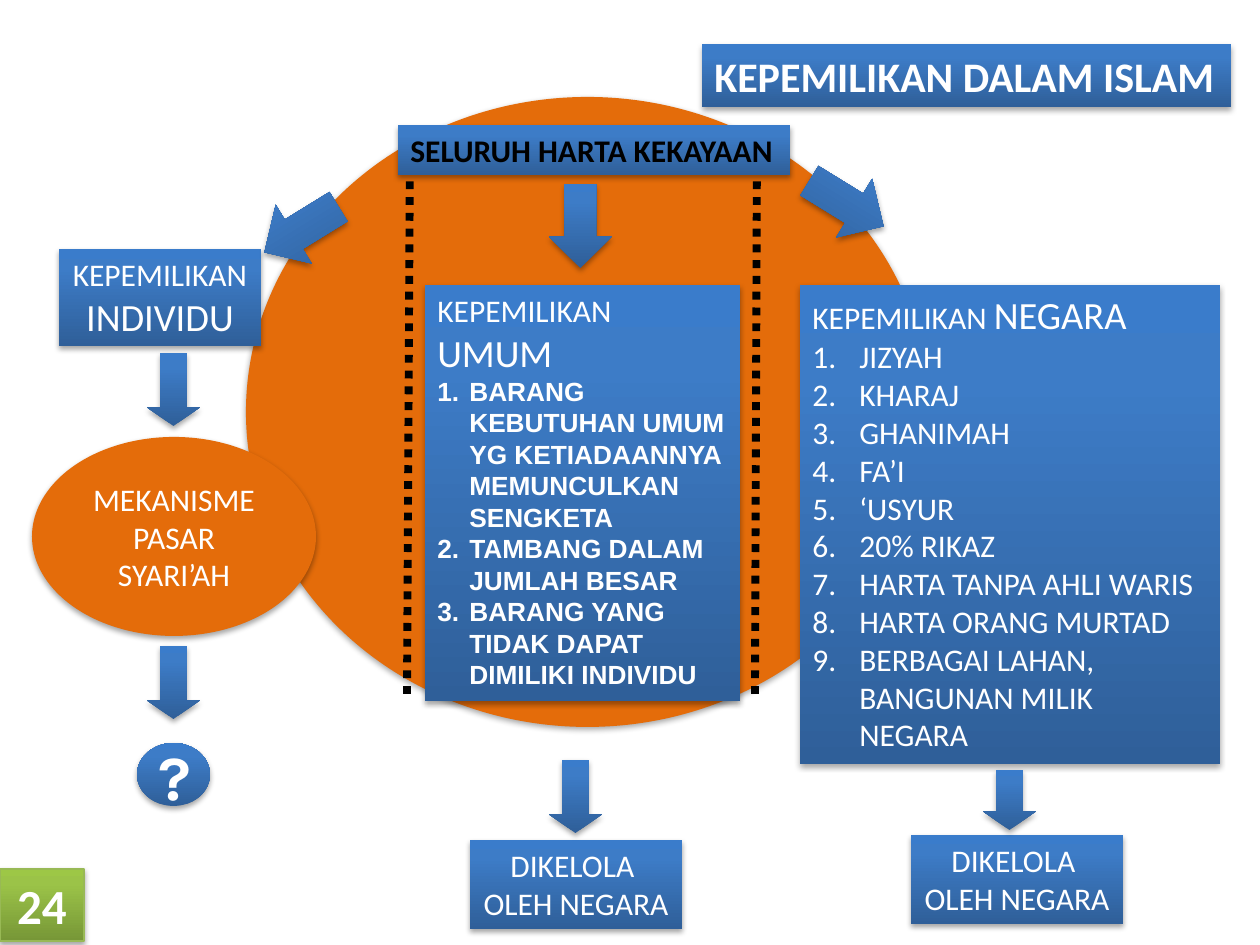
from dataclasses import dataclass, replace

from lxml.etree import SubElement
from pptx import Presentation
from pptx.dml.color import RGBColor
from pptx.enum.dml import MSO_LINE_DASH_STYLE as Dash
from pptx.enum.shapes import MSO_CONNECTOR as Connector, MSO_SHAPE as Shape
from pptx.enum.text import MSO_ANCHOR as Anchor, MSO_AUTO_SIZE as AutoSize, PP_ALIGN as Align
from pptx.oxml.ns import qn
from pptx.util import Emu, Pt

EMU_PER_PX = 914400 / 126


@dataclass(frozen=True)
class Style:
    size: int
    font: str = "Calibri"
    color: str = "FFFFFF"
    bold: bool = False


@dataclass(frozen=True)
class Theme:
    orange: str = "E46C0A"
    black: str = "000000"
    green_line: str = "98B955"
    blue: tuple = ((0, "2F5F99"), (80, "3D7CC7"), (100, "3A7CCB"))
    green: tuple = ((0, "779737"), (80, "9BC348"), (100, "9DC746"))
    title: Style = Style(24, bold=True)
    body: Style = Style(18)
    accent: Style = Style(22)
    detail: Style = Style(15, "Arial", bold=True)
    question: Style = Style(36, "Karla", bold=True)
    number: Style = Style(28, bold=True)


THEME = Theme()


def px(value):
    return Emu(round(value * EMU_PER_PX))


def add_node(parent, tag, **attributes):
    return SubElement(parent, qn(tag), attributes)


def add_color(parent, color):
    return add_node(parent, "a:srgbClr", val=color)


def fill_gradient(shape, stops):
    shape.fill.gradient()
    shape.fill.gradient_angle = 90
    stop_list = shape._element.spPr.find(qn("a:gradFill")).find(qn("a:gsLst"))
    for stop in list(stop_list):
        stop_list.remove(stop)
    for percent, color in stops:
        add_color(add_node(stop_list, "a:gs", pos=str(percent * 1000)), color)


def add_shadow(shape):
    shape.shadow.inherit = False
    effects = shape._element.spPr.find(qn("a:effectLst"))
    shadow = add_node(effects, "a:outerShdw", blurRad="40000", dist="23000",
                      dir="5400000", rotWithShape="0")
    add_node(add_color(shadow, THEME.black), "a:alpha", val="35000")


def add_figure(shapes, kind, place, fill=THEME.blue, turn=0, adjust=()):
    shape = shapes.add_shape(kind, *map(px, place))
    if isinstance(fill, str):
        shape.fill.solid()
        shape.fill.fore_color.rgb = RGBColor.from_string(fill)
    else:
        fill_gradient(shape, fill)
    shape.line.fill.background()
    add_shadow(shape)
    shape.rotation = turn
    for index, value in enumerate(adjust):
        shape.adjustments[index] = value
    return shape


def number_para(para, indent):
    properties = para._p.get_or_add_pPr()
    properties.set("marL", str(px(indent)))
    properties.set("indent", str(-px(indent)))
    add_node(properties, "a:buFont", typeface="+mj-lt")
    add_node(properties, "a:buAutoNum", type="arabicPeriod")


def write_text(shape, paras, align=Align.LEFT, wrap=False, indent=0,
               anchor=Anchor.TOP, size=AutoSize.SHAPE_TO_FIT_TEXT):
    frame = shape.text_frame
    frame.word_wrap = wrap
    frame.auto_size = size
    frame.vertical_anchor = anchor
    for index, spans in enumerate(paras):
        para = frame.add_paragraph() if index else frame.paragraphs[0]
        para.alignment = align
        if indent and index:
            number_para(para, indent)
        for text, style in spans:
            span = para.add_run()
            span.text = text
            span.font.size = Pt(style.size)
            span.font.name = style.font
            span.font.bold = style.bold
            span.font.color.rgb = RGBColor.from_string(style.color)


def add_box(page, place, paras, fill=THEME.blue, **layout):
    box = add_figure(page.shapes, Shape.RECTANGLE, place, fill)
    write_text(box, paras, **layout)
    return box


def add_list_box(page, place, heading, items, style, indent):
    opening = [("KEPEMILIKAN ", THEME.body), (heading, THEME.accent)]
    add_box(page, place, [opening] + [[(item, style)] for item in items],
            wrap=True, indent=indent)


def add_divider(page, top_x, bottom_x):
    line = page.shapes.add_connector(
        Connector.STRAIGHT, px(top_x), px(134), px(bottom_x), px(701))
    line.line.color.rgb = RGBColor.from_string(THEME.black)
    line.line.width = Pt(4.5)
    line.line.dash_style = Dash.ROUND_DOT
    add_node(line._element.spPr, "a:effectLst")


def add_question(page):
    group = page.shapes.add_group_shape()
    add_figure(group.shapes, Shape.OVAL, (137, 743, 73, 63))
    label = group.shapes.add_textbox(*map(px, (146, 731, 58, 89)))
    write_text(label, [[("?", THEME.question)]])


def main():
    deck = Presentation()
    deck.slide_width, deck.slide_height = px(1260), px(945)
    page = deck.slides.add_slide(deck.slide_layouts[6])
    body = THEME.body

    add_figure(page.shapes, Shape.OVAL, (246, 97, 683, 630), THEME.orange)
    add_box(page, (702, 44, 529, 63), [[("KEPEMILIKAN DALAM ISLAM", THEME.title)]])
    for top_x, bottom_x in ((410, 407), (757, 755)):
        add_divider(page, top_x, bottom_x)

    add_box(page, (59, 249, 202, 97),
            [[("KEPEMILIKAN", body)], [("INDIVIDU", THEME.accent)]], align=Align.CENTER)
    add_list_box(page, (425, 285, 315, 416), "UMUM", (
        "BARANG KEBUTUHAN UMUM YG KETIADAANNYA MEMUNCULKAN SENGKETA",
        "TAMBANG DALAM JUMLAH BESAR",
        "BARANG YANG TIDAK DAPAT DIMILIKI INDIVIDU",
    ), THEME.detail, 32)
    add_list_box(page, (800, 285, 420, 479), "NEGARA", (
        "JIZYAH", "KHARAJ", "GHANIMAH", "FA’I", "‘USYUR", "20% RIKAZ",
        "HARTA TANPA AHLI WARIS", "HARTA ORANG MURTAD",
        "BERBAGAI LAHAN, BANGUNAN MILIK NEGARA",
    ), body, 47)

    for kind, place, turn in (
        (Shape.LEFT_ARROW, (258, 195, 87, 69), 328.4),
        (Shape.DOWN_ARROW, (549, 184, 63, 84), 0),
        (Shape.RIGHT_ARROW, (803, 169, 87, 69), 31.6),
    ):
        add_figure(page.shapes, kind, place, turn=turn, adjust=(0.5, 0.5))
    add_box(page, (398, 125, 392, 50),
            [[("SELURUH HARTA KEKAYAAN", replace(body, color=THEME.black, bold=True))]])

    market = add_figure(page.shapes, Shape.OVAL, (32, 437, 284, 199), THEME.orange)
    write_text(market, [[("MEKANISME PASAR SYARI’AH", body)]], align=Align.CENTER,
               wrap=True, anchor=Anchor.MIDDLE, size=AutoSize.NONE)
    for left, top in ((470, 840), (911, 835)):
        add_box(page, (left, top, 212, 89),
                [[("DIKELOLA ", body)], [("OLEH NEGARA", body)]], align=Align.CENTER)
    for left, top, height in ((147, 353, 73), (147, 646, 73), (549, 760, 73), (983, 770, 60)):
        add_figure(page.shapes, Shape.DOWN_ARROW, (left, top, 53, height), adjust=(0.5, 0.35))

    add_question(page)
    badge = add_box(page, (0, 869, 84, 72), [[("24", THEME.number)]], THEME.green,
                    align=Align.CENTER, wrap=True)
    badge.line.color.rgb = RGBColor.from_string(THEME.green_line)
    badge.line.width = Pt(0.75)
    deck.save("out.pptx")


if __name__ == "__main__":
    main()
